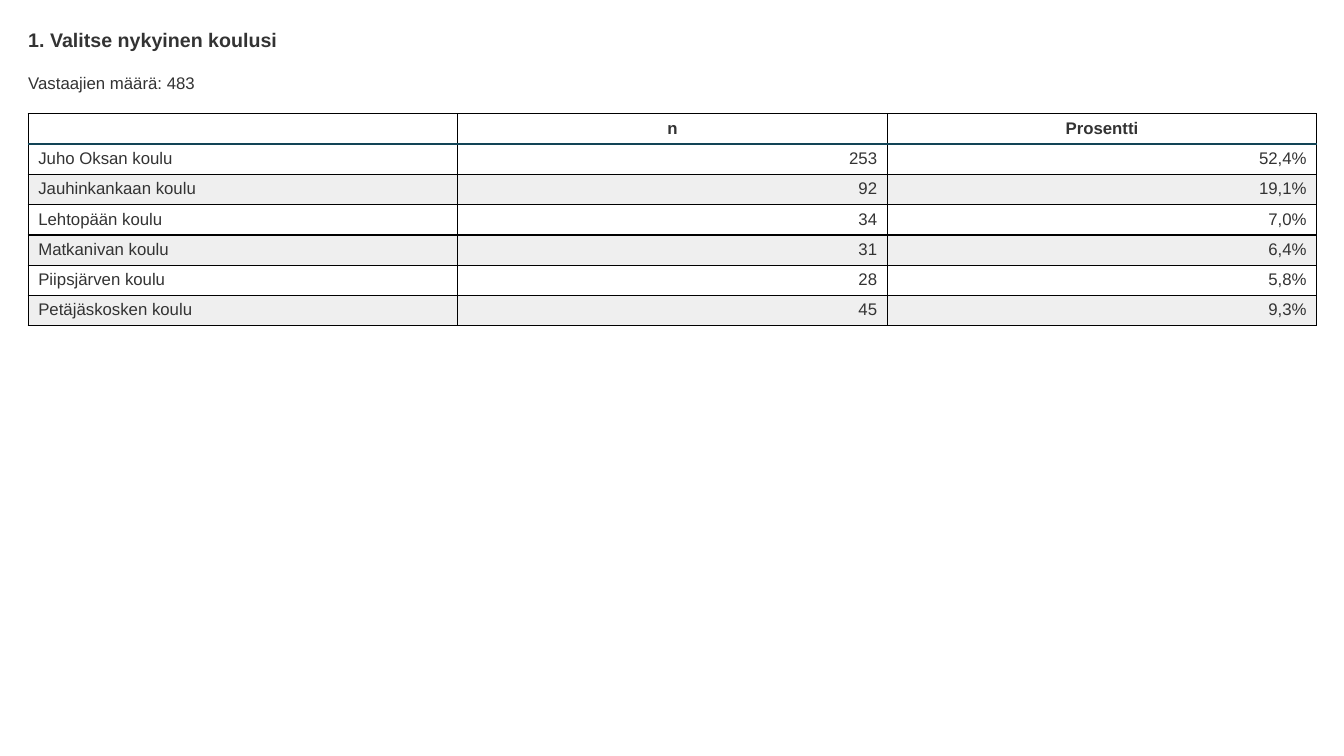
from dataclasses import dataclass

from lxml import etree
from pptx import Presentation
from pptx.dml.color import RGBColor
from pptx.enum.text import MSO_ANCHOR, MSO_AUTO_SIZE, PP_ALIGN
from pptx.oxml.ns import qn
from pptx.util import Inches, Pt

LEFT, CENTER, RIGHT = PP_ALIGN.LEFT, PP_ALIGN.CENTER, PP_ALIGN.RIGHT
TOP = MSO_ANCHOR.TOP
FIT_SHAPE = MSO_AUTO_SIZE.SHAPE_TO_FIT_TEXT

QUESTION = "1. Valitse nykyinen koulusi"
RESPONDENTS = "Vastaajien määrä: 483"
HEADINGS = ("", "n", "Prosentti")
SCHOOLS = [
    ("Juho Oksan koulu", "253", "52,4%"),
    ("Jauhinkankaan koulu", "92", "19,1%"),
    ("Lehtopään koulu", "34", "7,0%"),
    ("Matkanivan koulu", "31", "6,4%"),
    ("Piipsjärven koulu", "28", "5,8%"),
    ("Petäjäskosken koulu", "45", "9,3%"),
]


@dataclass(frozen=True)
class Theme:
    font: str = "Arial"
    ink: str = "333333"
    band: str = "EFEFEF"
    grid: str = "000000"
    header_rule: str = "124456"
    title_size: int = 14
    body_size: int = 12
    grid_width: int = 1
    header_rule_width: int = 2


THEME = Theme()
MARGIN, CONTENT_WIDTH = 0.28, 12.78
TABLE_TOP, ROW_HEIGHT = 1.13, 0.3


def write(frame, text, size=THEME.body_size, bold=False, align=LEFT):
    paragraph = frame.paragraphs[0]
    paragraph.alignment = align
    if not text:
        # An empty cell still takes its row height from this size.
        end = etree.SubElement(paragraph._p, qn("a:endParaRPr"))
        end.set("sz", str(size * 100))
        return
    run = paragraph.add_run()
    run.text = text
    run.font.name = THEME.font
    run.font.size = Pt(size)
    run.font.bold = bold
    run.font.color.rgb = RGBColor.from_string(THEME.ink)


def place_line(box, top, height):
    """Set a full-width line of text without insets."""
    box.left, box.top = Inches(MARGIN), Inches(top)
    box.width, box.height = Inches(CONTENT_WIDTH), Inches(height)
    frame = box.text_frame
    frame.margin_left = frame.margin_right = 0
    frame.margin_top = frame.margin_bottom = 0
    frame.vertical_anchor = TOP
    frame.word_wrap = True
    frame.auto_size = FIT_SHAPE
    return frame


def add_border(cell, side, color, width):
    line = etree.SubElement(cell._tc.get_or_add_tcPr(), qn(f"a:ln{side}"),
                            w=str(Pt(width)))
    fill = etree.SubElement(line, qn("a:solidFill"))
    etree.SubElement(fill, qn("a:srgbClr"), val=color)


def style_cell(cell, row):
    grid = (THEME.grid, THEME.grid_width)
    rule = (THEME.header_rule, THEME.header_rule_width)
    borders = {"L": grid, "R": grid,
               "T": rule if row == 1 else grid,
               "B": rule if row == 0 else grid}
    for side, (color, width) in borders.items():
        add_border(cell, side, color, width)
    if row and row % 2 == 0:
        cell.fill.solid()
        cell.fill.fore_color.rgb = RGBColor.from_string(THEME.band)
    else:
        cell.fill.background()


def add_school_table(slide):
    rows = [HEADINGS, *SCHOOLS]
    table = slide.shapes.add_table(
        len(rows), len(HEADINGS), Inches(MARGIN), Inches(TABLE_TOP),
        Inches(CONTENT_WIDTH), Inches(ROW_HEIGHT * len(rows))).table
    table.first_row = table.horz_banding = False
    for r, values in enumerate(rows):
        for c, value in enumerate(values):
            cell = table.cell(r, c)
            style_cell(cell, r)
            align = CENTER if r == 0 else RIGHT if c else LEFT
            write(cell.text_frame, value, bold=r == 0, align=align)


def main():
    deck = Presentation()
    deck.slide_width, deck.slide_height = Inches(13.33), Inches(7.5)
    slide = deck.slides.add_slide(deck.slide_layouts[5])

    title = place_line(slide.shapes.title, 0.28, 0.23)
    write(title, QUESTION, size=THEME.title_size, bold=True)
    respondents = place_line(slide.shapes.add_textbox(0, 0, 0, 0), 0.72, 0.2)
    write(respondents, RESPONDENTS)
    add_school_table(slide)

    deck.save("out.pptx")


if __name__ == "__main__":
    main()
